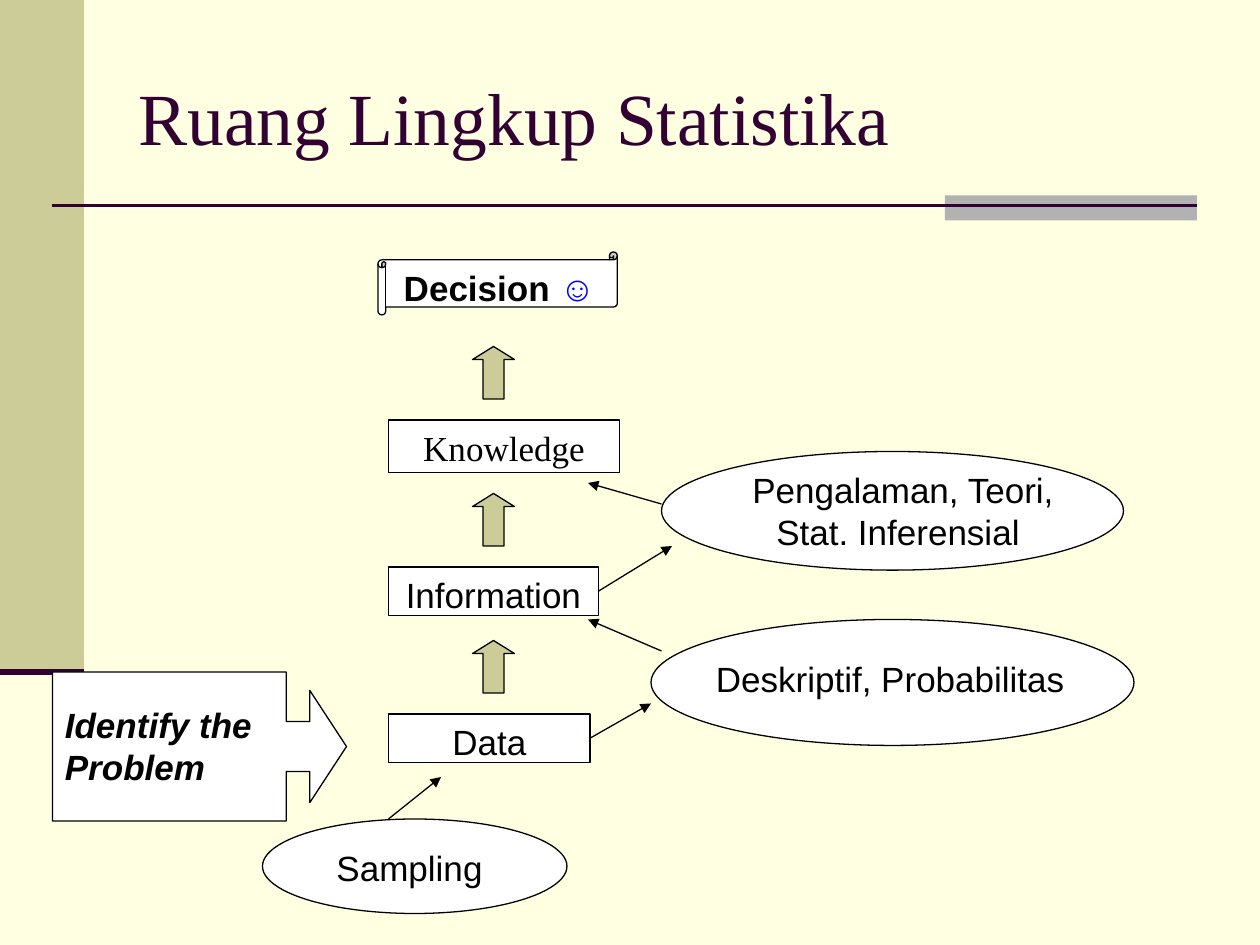
from dataclasses import dataclass
from typing import Optional

from lxml.etree import SubElement
from pptx import Presentation
from pptx.dml.color import RGBColor
from pptx.enum.shapes import MSO_CONNECTOR, MSO_SHAPE as Preset
from pptx.enum.text import MSO_ANCHOR as Anchor, MSO_AUTO_SIZE, PP_ALIGN as Align
from pptx.oxml.ns import qn
from pptx.util import Emu, Pt

EMU_PER_PX = 7620  # 120 px to the inch
CREAM, KHAKI, GREY, PLUM = "FFFFE1", "CCCC99", "B2B2B2", "330033"
WHITE, BLACK, BLUE = "FFFFFF", "000000", "0000FF"
SANS, SERIF = "Arial", "Times New Roman"


@dataclass
class Box:
    left: int
    top: int
    width: int
    height: int


@dataclass
class Label:
    text: str
    font: str = SANS
    bold: bool = False
    italic: bool = False
    align: Align = Align.CENTER


@dataclass
class Arrow:
    start: tuple[int, int]
    end: tuple[int, int]
    source: Optional[str] = None  # stage whose right side it leaves


def px(length: int) -> Emu:
    return Emu(length * EMU_PER_PX)


def color(hex_code: str) -> RGBColor:
    return RGBColor.from_string(hex_code)


def place(box: Box) -> tuple[Emu, Emu, Emu, Emu]:
    return px(box.left), px(box.top), px(box.width), px(box.height)


def format_run(run, font: str, size: int, ink: str, bold=False, italic=False) -> None:
    run.font.name = font
    run.font.size = Pt(size)
    run.font.bold = bold
    run.font.italic = italic
    run.font.color.rgb = color(ink)


def write(shape, label: Label) -> None:
    frame = shape.text_frame
    frame.word_wrap = True
    frame.vertical_anchor = Anchor.TOP
    frame.text = label.text
    line = frame.paragraphs[0]
    line.alignment = label.align
    format_run(line.runs[0], label.font, 20, BLACK, label.bold, label.italic)


def draw_shape(slide, preset, box: Box, fill: str, outline: Optional[str] = BLACK,
               label: Optional[Label] = None, adjust: tuple[float, ...] = ()):
    shape = slide.shapes.add_shape(preset, *place(box))
    shape.shadow.inherit = False
    shape.fill.solid()
    shape.fill.fore_color.rgb = color(fill)
    if outline:
        shape.line.color.rgb = color(outline)
        shape.line.width = Pt(0.75)
    else:
        shape.line.fill.background()
    for index, value in enumerate(adjust):
        shape.adjustments[index] = value
    if label:
        write(shape, label)
    return shape


def draw_line(slide, start: tuple[int, int], end: tuple[int, int],
              ink: str = BLACK, weight: float = 0.75):
    line = slide.shapes.add_connector(
        MSO_CONNECTOR.STRAIGHT, *(px(value) for value in start + end))
    line.line.color.rgb = color(ink)
    line.line.width = Pt(weight)
    SubElement(line._element.spPr, qn("a:effectLst"))
    return line


def draw_arrow(slide, arrow: Arrow, stages: dict) -> None:
    line = draw_line(slide, arrow.start, arrow.end)
    if arrow.source:
        line.begin_connect(stages[arrow.source], 3)
    SubElement(line.line._get_or_add_ln(), qn("a:tailEnd"), type="triangle")


STAGES = [
    (Box(370, 400, 220, 50), Label("Knowledge", SERIF)),
    (Box(370, 540, 200, 46), Label("Information")),
    (Box(370, 680, 192, 46), Label("Data")),
]
METHODS = [  # ellipse, text area, label
    (Box(620, 590, 460, 120), Box(670, 620, 370, 52),
     Label("Deskriptif, Probabilitas", align=Align.LEFT)),
    (Box(630, 430, 440, 113), Box(700, 440, 320, 92),
     Label("Pengalaman, Teori, Stat. Inferensial ")),
    (Box(250, 780, 290, 90), Box(280, 800, 220, 52), Label("Sampling")),
]
ARROWS = [
    Arrow((562, 703), (620, 670), "Data"),
    Arrow((630, 620), (560, 590)),
    Arrow((570, 563), (640, 520), "Information"),
    Arrow((630, 480), (560, 460)),
    Arrow((370, 780), (420, 740)),
]


def main() -> None:
    deck = Presentation()
    deck.slide_width, deck.slide_height = px(1200), px(900)
    slide = deck.slides.add_slide(deck.slide_layouts[5])
    slide.background.fill.solid()
    slide.background.fill.fore_color.rgb = color(CREAM)

    # Side band and title rule
    draw_shape(slide, Preset.RECTANGLE, Box(0, 0, 80, 640), KHAKI, None)
    draw_shape(slide, Preset.RECTANGLE, Box(900, 186, 240, 24), GREY, None)
    draw_line(slide, (50, 196), (1140, 196), PLUM, 1.5)
    draw_line(slide, (0, 640), (80, 640), PLUM, 3.5)

    # Title
    title = slide.shapes.title
    title.left, title.top, title.width, title.height = place(Box(120, 36, 1020, 150))
    title.text_frame.text = "Ruang Lingkup Statistika"
    title.text_frame.auto_size = MSO_AUTO_SIZE.NONE
    title.text_frame.vertical_anchor = Anchor.MIDDLE
    heading = title.text_frame.paragraphs[0]
    heading.alignment = Align.LEFT
    format_run(heading.runs[0], SERIF, 42, PLUM)

    # Decision scroll at the top of the ladder
    decision = draw_shape(slide, Preset.HORIZONTAL_SCROLL, Box(360, 240, 228, 60), WHITE,
                          label=Label("Decision ", bold=True), adjust=(0.125,))
    smiley = decision.text_frame.paragraphs[0].add_run()
    smiley.text = "☺"
    format_run(smiley, SANS, 20, BLUE, bold=True)

    # Stages, each with a block arrow above it
    stages = {}
    for box, label in STAGES:
        draw_shape(slide, Preset.UP_ARROW, Box(450, box.top - 70, 40, 50), KHAKI,
                   adjust=(0.5, 0.312))
        stages[label.text] = draw_shape(slide, Preset.RECTANGLE, box, WHITE, label=label)

    # Starting point
    problem = draw_shape(
        slide, Preset.RIGHT_ARROW_CALLOUT, Box(50, 640, 280, 142), WHITE,
        label=Label("Identify the Problem", bold=True, italic=True, align=Align.LEFT),
        adjust=(0.336, 0.376, 0.246, 0.795))
    problem.text_frame.margin_top = px(30)

    # Methods that lead from one stage to the next
    for ellipse, area, label in METHODS:
        draw_shape(slide, Preset.OVAL, ellipse, WHITE)
        write(slide.shapes.add_textbox(*place(area)), label)
    for arrow in ARROWS:
        draw_arrow(slide, arrow, stages)

    deck.save("out.pptx")


if __name__ == "__main__":
    main()
